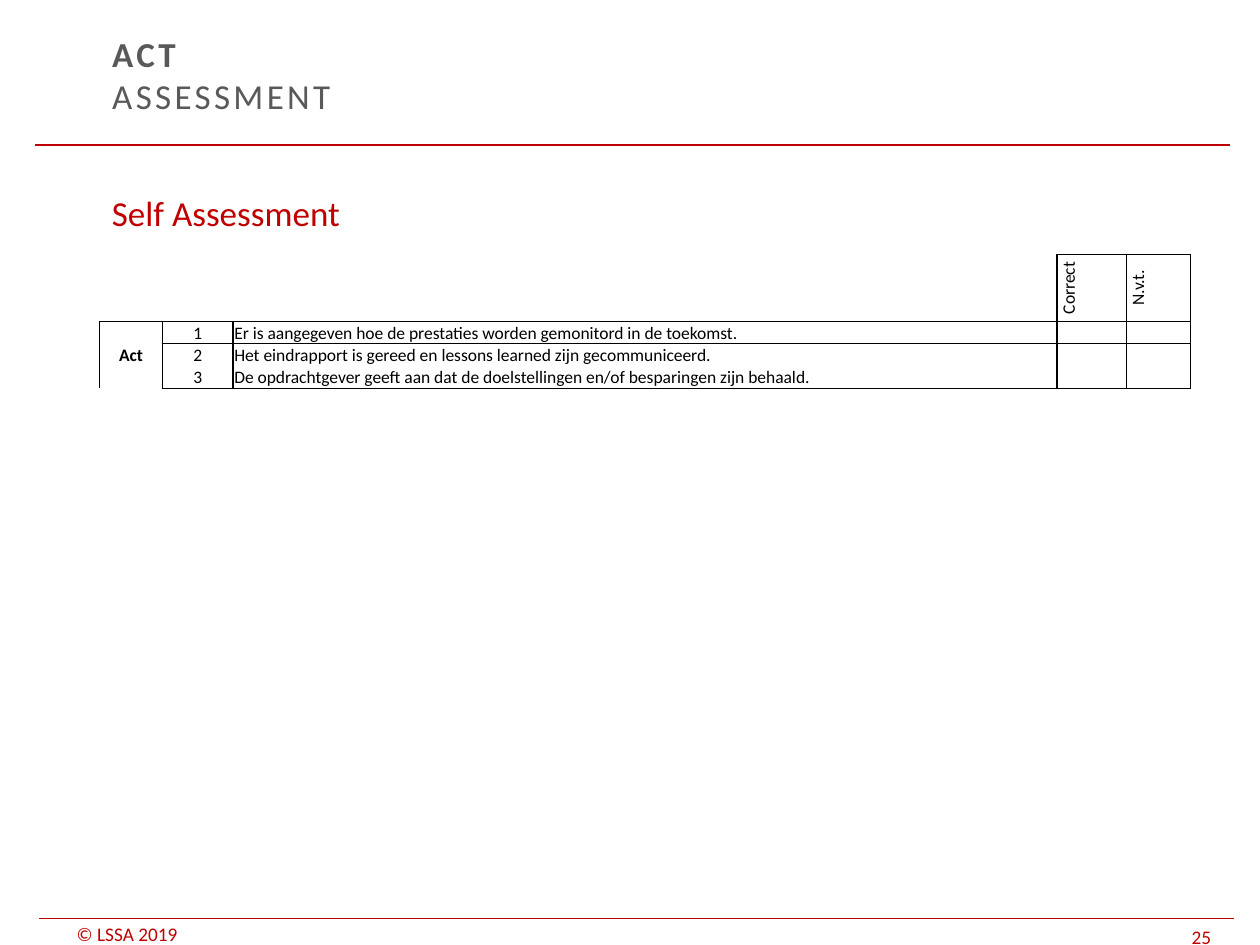
from dataclasses import dataclass

from lxml.etree import SubElement
from pptx import Presentation
from pptx.dml.color import RGBColor
from pptx.enum.shapes import MSO_CONNECTOR
from pptx.enum.text import MSO_ANCHOR, MSO_AUTO_SIZE, PP_ALIGN
from pptx.oxml.ns import qn
from pptx.util import Inches, Pt


@dataclass(frozen=True)
class Theme:
    font: str = "Calibri"
    red: str = "C00000"
    grey: str = "595959"
    black: str = "000000"
    heading: int = 20
    footer: int = 11
    cell: int = 10


THEME = Theme()
NO_STYLE = "{2D5ABB26-0587-4C30-8999-92F81FD0307C}"
COLUMNS = (0.5, 0.56, 6.54, 0.55, 0.51)
ROWS = (0.53, 0.16, 0.16, 0.17)
STATEMENTS = (
    "Er is aangegeven hoe de prestaties worden gemonitord in de toekomst.",
    "Het eindrapport is gereed en lessons learned zijn gecommuniceerd.",
    "De opdrachtgever geeft aan dat de doelstellingen en/of besparingen zijn behaald.",
)
# Outlined blocks of cells: top row, left column, bottom row, right column
BLOCKS = ((0, 3, 0, 3), (0, 4, 0, 4), (1, 0, 3, 0), (1, 1, 3, 1), (1, 2, 3, 2), (1, 3, 3, 4))


def set_format(target, **values):
    for name, value in values.items():
        setattr(target, name, value)


def add_run(p, text, size, color, bold=False):
    r = p.add_run()
    r.text = text
    set_format(r.font, name=THEME.font, size=Pt(size), bold=bold)
    r.font.color.rgb = RGBColor.from_string(color)
    return r


def add_title(s):
    title = s.shapes.title
    set_format(title, left=Inches(0.79), top=Inches(0.26), width=Inches(7.09), height=Inches(0.66))
    tf = title.text_frame
    set_format(tf, vertical_anchor=MSO_ANCHOR.MIDDLE, auto_size=MSO_AUTO_SIZE.NONE, word_wrap=True)
    p = tf.paragraphs[0]
    p.alignment = PP_ALIGN.LEFT
    first = add_run(p, "ACT", THEME.heading, THEME.grey, bold=True)
    p.add_line_break()
    second = add_run(p, "ASSESSMENT", THEME.heading, THEME.grey)
    for r in (first, second):
        r.font._element.set("spc", "190")


def add_text(s, text, box, size, anchor=MSO_ANCHOR.TOP, inset=0.05):
    tf = s.shapes.add_textbox(*map(Inches, box)).text_frame
    set_format(tf, word_wrap=True, vertical_anchor=anchor,
               margin_top=Inches(inset), margin_bottom=Inches(inset))
    add_run(tf.paragraphs[0], text, size, THEME.red)


def add_rule(s, left, top, width):
    line = s.shapes.add_connector(MSO_CONNECTOR.STRAIGHT, Inches(left), Inches(top),
                                  Inches(left + width), Inches(top))
    line.line.color.rgb = RGBColor.from_string(THEME.red)
    line.line.width = Pt(0.75)
    SubElement(line._element.spPr, qn("a:effectLst"))


def fill_cell(cell, text="", align=PP_ALIGN.LEFT, bold=False):
    set_format(cell, vertical_anchor=MSO_ANCHOR.MIDDLE, margin_left=Inches(0.01),
               margin_right=Inches(0.01), margin_top=Inches(0.01), margin_bottom=0)
    cell.fill.background()
    p = cell.text_frame.paragraphs[0]
    p.alignment = align
    if text:
        add_run(p, text, THEME.cell, THEME.black, bold)
    else:
        SubElement(p._p, qn("a:endParaRPr"), sz=str(THEME.cell * 100))


def block_borders(row, col):
    """Give the widths of the block edges that touch a cell, by side."""
    sides = {}
    for top, left, bottom, right in BLOCKS:
        if left <= col <= right:
            if row in (top, bottom + 1):
                sides["T"] = 1
            if row in (bottom, top - 1):
                sides["B"] = 1
        if top <= row <= bottom:
            if col in (left, right + 1):
                sides["L"] = 1
            if col in (right, left - 1):
                sides["R"] = 1
    if row == 0 and col in (3, 4):
        sides["R" if col == 3 else "L"] = 0.5
    return sides


def draw_borders(cell, sides):
    tc_pr = cell._tc.get_or_add_tcPr()
    ordered = [side for side in "LRTB" if side in sides]
    for index, side in enumerate(ordered):
        ln = SubElement(tc_pr, qn(f"a:ln{side}"), w=str(Pt(sides[side])))
        fill = SubElement(ln, qn("a:solidFill"))
        SubElement(fill, qn("a:srgbClr"), val=THEME.black)
        tc_pr.insert(index, ln)


def add_checklist(s):
    frame = s.shapes.add_table(len(ROWS), len(COLUMNS), Inches(0.79), Inches(2.02),
                               Inches(sum(COLUMNS)), Inches(sum(ROWS)))
    table = frame.table
    set_format(table, first_row=False, horz_banding=False)
    table._tbl.tblPr.find(qn("a:tableStyleId")).text = NO_STYLE
    for column, width in zip(table.columns, COLUMNS):
        column.width = Inches(width)
    for row, height in zip(table.rows, ROWS):
        row.height = Inches(height)

    center = PP_ALIGN.CENTER
    content = {(0, 3): ("Correct", center), (0, 4): ("N.v.t.", center), (1, 0): ("Act", center, True)}
    for number, statement in enumerate(STATEMENTS, 1):
        content[number, 1] = (str(number), center)
        content[number, 2] = (statement,)
    for row in range(len(ROWS)):
        for col in range(len(COLUMNS)):
            cell = table.cell(row, col)
            fill_cell(cell, *content.get((row, col), ()))
            draw_borders(cell, block_borders(row, col))
    for col in (3, 4):
        table.cell(0, col)._tc.get_or_add_tcPr().set("vert", "vert270")
    table.cell(1, 0).merge(table.cell(3, 0))


def main():
    prs = Presentation()
    set_format(prs, slide_width=Inches(10), slide_height=Inches(7.5))
    s = prs.slides.add_slide(prs.slide_layouts[5])
    add_text(s, "© LSSA 2019", (0.51, 7.32, 1.42, 0.18), THEME.footer, MSO_ANCHOR.BOTTOM, 0)
    add_text(s, "25", (9.36, 7.31, 0.64, 0.22), THEME.footer, MSO_ANCHOR.BOTTOM, 0)
    add_rule(s, 0.28, 1.15, 9.48)
    add_rule(s, 0.31, 7.29, 9.48)
    add_title(s)
    add_text(s, "Self Assessment", (0.79, 1.47, 8.66, 5.51), THEME.heading)
    add_checklist(s)
    prs.save("out.pptx")


if __name__ == "__main__":
    main()
